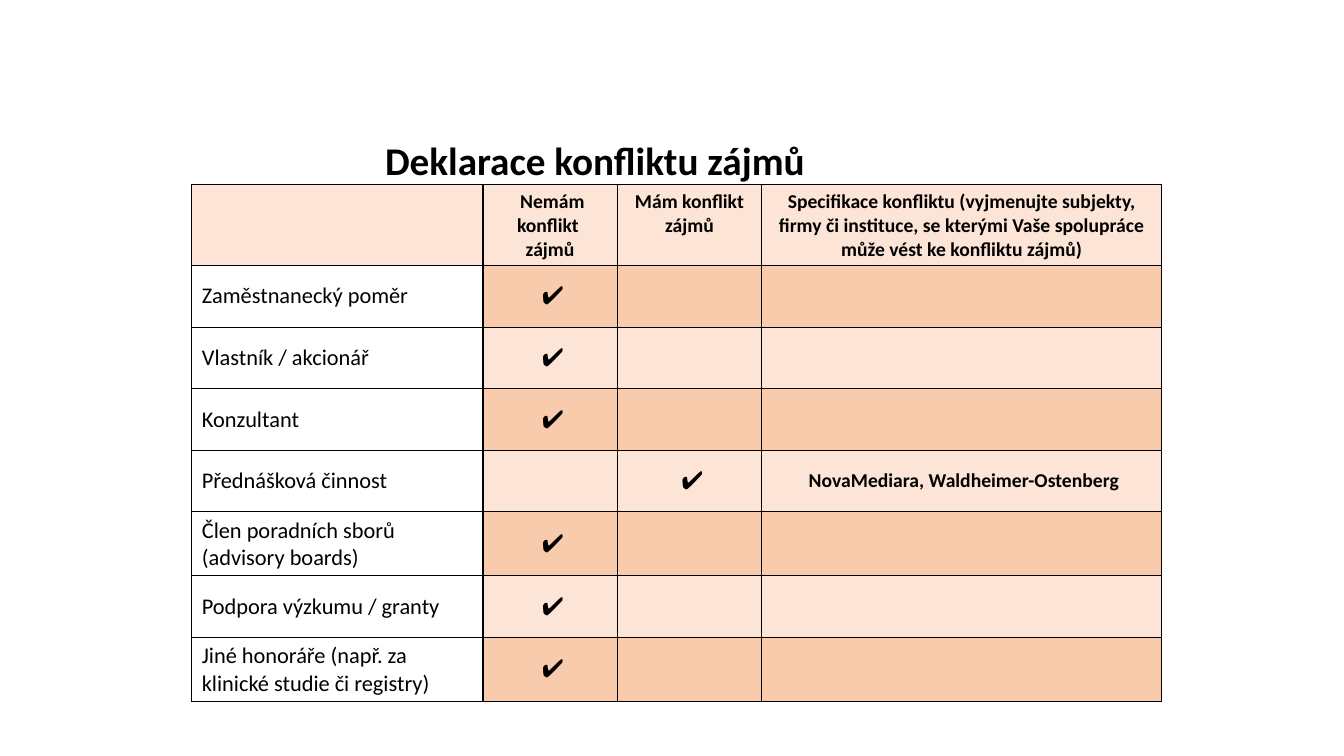
from lxml.etree import SubElement
from pptx import Presentation
from pptx.dml.color import RGBColor
from pptx.enum.text import MSO_ANCHOR, MSO_AUTO_SIZE, PP_ALIGN
from pptx.oxml.ns import qn
from pptx.util import Pt

FONT = "Calibri"
BLACK, WHITE = "000000", "FFFFFF"
LIGHT, DARK = "FCE4D6", "F8CBAD"
CHECK = " ✔"
COLUMN_WIDTHS = [208, 96, 103, 286]
HEADER_HEIGHT, ROW_HEIGHT = 57, 44
HEADERS = [
    [],
    [" Nemám konflikt ", "zájmů"],
    ["Mám konflikt zájmů"],
    ["Specifikace konfliktu (vyjmenujte subjekty, firmy či instituce, "
     "se kterými Vaše spolupráce může vést ke konfliktu zájmů)"],
]
# Relationship, and the named parties when there is a conflict
RELATIONSHIPS = [
    ("Zaměstnanecký poměr", ""),
    ("Vlastník / akcionář", ""),
    ("Konzultant", ""),
    ("Přednášková činnost", " NovaMediara, Waldheimer-Ostenberg"),
    ("Člen poradních sborů (advisory boards)", ""),
    ("Podpora výzkumu / granty", ""),
    ("Jiné honoráře (např. za klinické studie či registry)", ""),
]


def color(value):
    return RGBColor.from_string(value)


def add_span(para, text, size, bold=False):
    span = para.add_run()
    span.text = text
    span.font.name = FONT
    span.font.size = Pt(size)
    span.font.bold = bold
    span.font.color.rgb = color(BLACK)


def add_borders(cell):
    properties = cell._tc.get_or_add_tcPr()
    for position, side in enumerate(("lnL", "lnR", "lnT", "lnB")):
        line = properties.makeelement(qn(f"a:{side}"), {"w": str(Pt(1))})
        fill = SubElement(line, qn("a:solidFill"))
        SubElement(fill, qn("a:srgbClr"), val=BLACK)
        properties.insert(position, line)


def fill_cell(cell, lines, fill, size, bold=False, align=PP_ALIGN.CENTER,
              anchor=MSO_ANCHOR.MIDDLE):
    cell.fill.solid()
    cell.fill.fore_color.rgb = color(fill)
    add_borders(cell)
    cell.vertical_anchor = anchor
    frame = cell.text_frame
    for index, text in enumerate(lines):
        para = frame.paragraphs[0] if index == 0 else frame.add_paragraph()
        para.alignment = align
        add_span(para, text, size, bold)


def add_title(page, left, top, width, height):
    box = page.shapes.add_textbox(Pt(left), Pt(top), Pt(width), Pt(height))
    frame = box.text_frame
    frame.word_wrap = False
    frame.auto_size = MSO_AUTO_SIZE.SHAPE_TO_FIT_TEXT
    add_span(frame.paragraphs[0], "Deklarace konfliktu zájmů", 28, True)


def add_declaration(page, left, top):
    """Add the table of relationships, its header row first."""
    height = HEADER_HEIGHT + ROW_HEIGHT * len(RELATIONSHIPS)
    table = page.shapes.add_table(
        len(RELATIONSHIPS) + 1, len(COLUMN_WIDTHS), Pt(left), Pt(top),
        Pt(sum(COLUMN_WIDTHS)), Pt(height)).table
    for column, width in zip(table.columns, COLUMN_WIDTHS):
        column.width = Pt(width)
    for row in table.rows:
        row.height = Pt(ROW_HEIGHT)
    table.rows[0].height = Pt(HEADER_HEIGHT)

    for index, lines in enumerate(HEADERS):
        fill_cell(table.cell(0, index), lines, LIGHT, 14, True,
                  anchor=MSO_ANCHOR.TOP)
    for row, (relationship, parties) in enumerate(RELATIONSHIPS, 1):
        band = DARK if row % 2 else LIGHT
        fill_cell(table.cell(row, 0), [relationship], WHITE, 16,
                  align=PP_ALIGN.LEFT)
        fill_cell(table.cell(row, 1), [] if parties else [CHECK], band, 18)
        fill_cell(table.cell(row, 2), [CHECK] if parties else [], band, 18)
        fill_cell(table.cell(row, 3), [parties] if parties else [], band, 14,
                  True)


def main():
    deck = Presentation()
    deck.slide_width, deck.slide_height = Pt(960), Pt(540)
    page = deck.slides.add_slide(deck.slide_layouts[6])
    add_title(page, 268, 93.6, 318, 41)
    add_declaration(page, 137, 132)
    deck.save("out.pptx")


if __name__ == "__main__":
    main()
